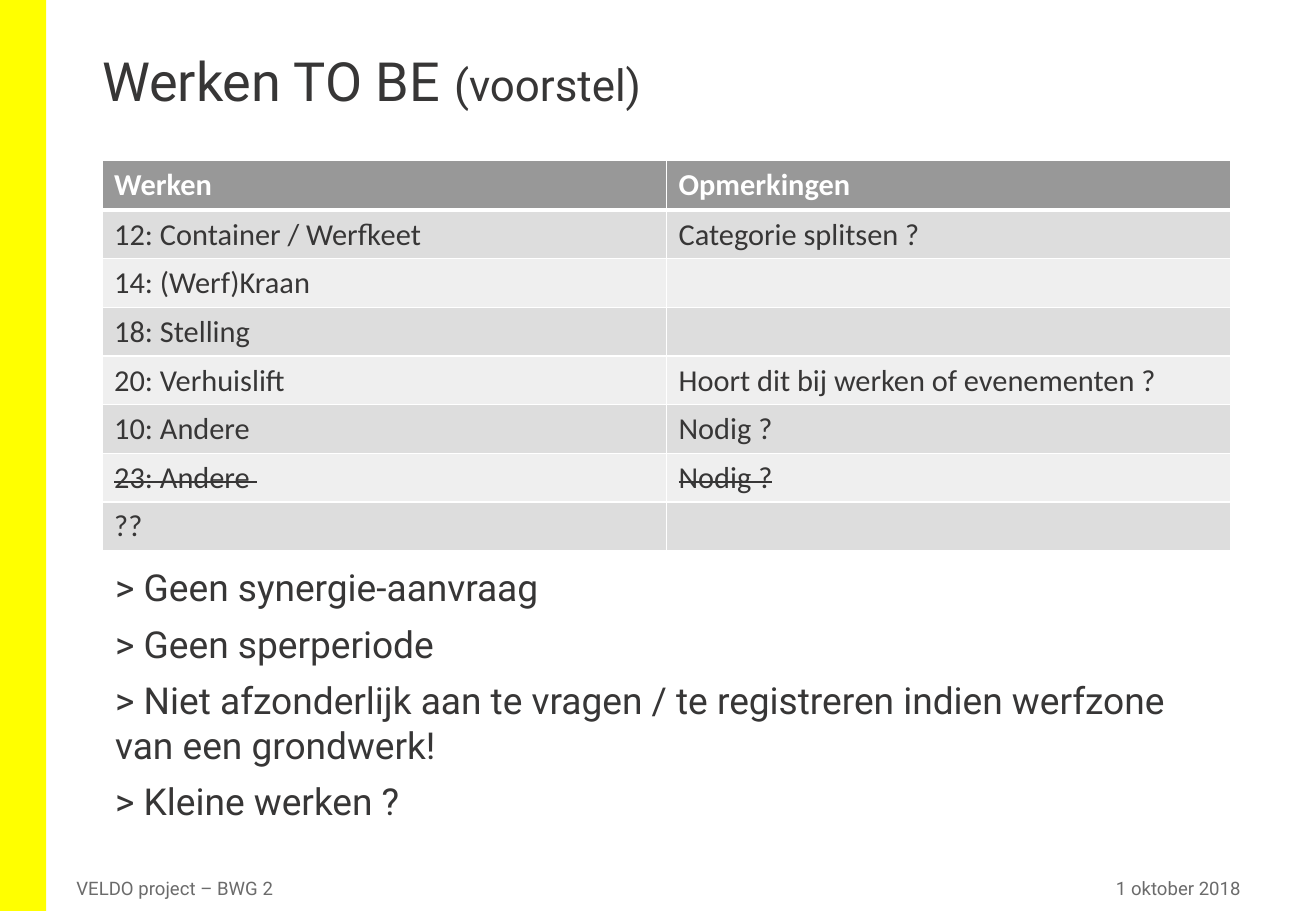
from dataclasses import dataclass

from lxml import etree
from pptx import Presentation
from pptx import util as u
from pptx.dml.color import RGBColor
from pptx.enum import shapes, text
from pptx.oxml import ns

HUES = {
    "bar": "FFFF00",
    "ink": "373636",
    "foot": "6B6B6B",
    "head": "989898",
    "dark": "DDDDDD",
    "light": "EFEFEF",
    "white": "FFFFFF",
}


@dataclass(frozen=True)
class Style:
    size: float
    hue: str
    font: str = "Roboto"
    bold: bool = False
    strike: bool = False


@dataclass(frozen=True)
class Block:
    left: float
    top: float
    width: float
    height: float
    lines: tuple[str, ...]
    style: Style
    align: text.PP_ALIGN = text.PP_ALIGN.LEFT
    anchor: text.MSO_ANCHOR = text.MSO_ANCHOR.TOP
    before: float = 0


@dataclass(frozen=True)
class Row:
    work: str
    note: str = ""
    strike: bool = False


FOOT = Style(11, "foot")
BLOCKS = (
    Block(0.85, 4.6, 9.34, 2.45, (
        "> Geen synergie-aanvraag",
        "> Geen sperperiode",
        "> Niet afzonderlijk aan te vragen / te registreren indien werfzone  van een grondwerk!",
        "> Kleine werken ?",
    ), Style(22, "ink"), before=7),
    Block(0.53, 7.22, 6.65, 0.19, ("VELDO project – BWG 2",), FOOT,
          anchor=text.MSO_ANCHOR.MIDDLE),
    Block(7.18, 7.22, 3.13, 0.19, ("1 oktober 2018",), FOOT,
          align=text.PP_ALIGN.RIGHT, anchor=text.MSO_ANCHOR.MIDDLE),
)
ROWS = (
    Row("Werken ", "Opmerkingen"),
    Row("12: Container / Werfkeet", "Categorie splitsen ?"),
    Row("14: (Werf)Kraan"),
    Row("18: Stelling"),
    Row("20: Verhuislift ", "Hoort dit bij werken of evenementen ?"),
    Row("10: Andere", "Nodig ?"),
    Row("23: Andere ", "Nodig ?", strike=True),
    Row("??"),
)


def tint(name: str) -> RGBColor:
    return RGBColor.from_string(HUES[name])


def add_run(para, words: str, style: Style) -> None:
    run = para.add_run()
    run.text = words
    run.font.size = u.Pt(style.size)
    run.font.name = style.font
    run.font.bold = style.bold
    run.font.color.rgb = tint(style.hue)
    if style.strike:
        run.font._element.set("strike", "sngStrike")


def add_bar(slide) -> None:
    bar = slide.shapes.add_shape(
        shapes.MSO_SHAPE.RECTANGLE, 0, 0, u.Inches(0.38), u.Inches(7.5))
    bar.shadow.inherit = False
    bar.fill.solid()
    bar.fill.fore_color.rgb = tint("bar")
    bar.line.fill.background()


def set_title(slide) -> None:
    title = slide.shapes.title
    title.left, title.top = u.Inches(0.74), u.Inches(0.4)
    title.width, title.height = u.Inches(9.73), u.Inches(1.08)
    frame = title.text_frame
    frame.vertical_anchor = text.MSO_ANCHOR.TOP
    frame.auto_size = text.MSO_AUTO_SIZE.NONE
    para = frame.paragraphs[0]
    para.alignment = text.PP_ALIGN.LEFT
    para.line_spacing = 0.9
    add_run(para, "Werken TO BE ", Style(32, "ink"))
    add_run(para, "(voorstel)", Style(26, "ink"))


def add_block(slide, block: Block) -> None:
    box = slide.shapes.add_textbox(
        u.Inches(block.left), u.Inches(block.top),
        u.Inches(block.width), u.Inches(block.height))
    frame = box.text_frame
    frame.word_wrap = True
    frame.vertical_anchor = block.anchor
    for i, line in enumerate(block.lines):
        para = frame.add_paragraph() if i else frame.paragraphs[0]
        para.alignment = block.align
        para.space_before = u.Pt(block.before)
        add_run(para, line, block.style)


def add_edge(cell, side: str, width: float) -> None:
    props = cell._tc.get_or_add_tcPr()
    edge = etree.SubElement(props, ns.qn(f"a:ln{side}"), w=str(u.Pt(width)))
    fill = etree.SubElement(edge, ns.qn("a:solidFill"))
    etree.SubElement(fill, ns.qn("a:srgbClr"), val=HUES["white"])


def fill_cell(cell, words: str, style: Style, hue: str, edges: dict[str, float]) -> None:
    for side, width in edges.items():
        add_edge(cell, side, width)
    cell.fill.solid()
    cell.fill.fore_color.rgb = tint(hue)
    if words:
        add_run(cell.text_frame.paragraphs[0], words, style)


def add_grid(slide) -> None:
    grid = slide.shapes.add_table(
        len(ROWS), 2, u.Inches(0.84), u.Inches(1.32),
        u.Inches(9.29), u.Inches(3.22)).table
    for i, row in enumerate(ROWS):
        head = i == 0
        grid.rows[i].height = u.Inches(0.41 if head else 0.4)
        hue = "head" if head else "dark" if i % 2 else "light"
        style = Style(18, "white" if head else "ink", "Calibri", head, row.strike)
        edges = {"L": 1, "R": 1, "T": 3 if i == 1 else 1, "B": 3 if head else 1}
        for j, words in enumerate((row.work, row.note)):
            fill_cell(grid.cell(i, j), words, style, hue, edges)


def main() -> None:
    deck = Presentation()
    deck.slide_width, deck.slide_height = u.Inches(10.83), u.Inches(7.5)
    slide = deck.slides.add_slide(deck.slide_layouts[5])
    add_bar(slide)
    set_title(slide)
    for block in BLOCKS:
        add_block(slide, block)
    add_grid(slide)
    deck.save("out.pptx")


if __name__ == "__main__":
    main()
